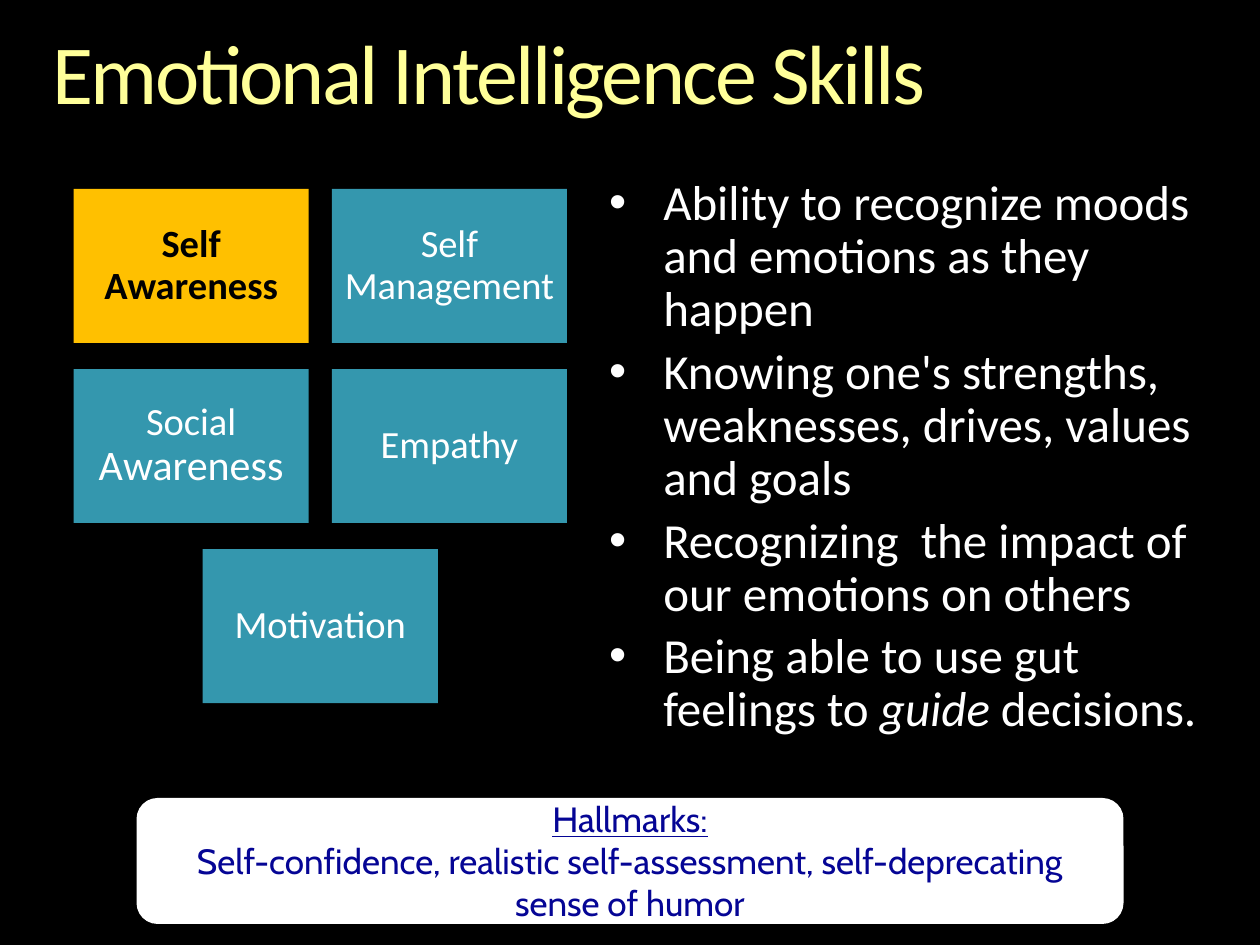
"""Build the slide on emotional intelligence skills."""
from dataclasses import dataclass

from lxml import etree
from pptx import Presentation
from pptx import util as u
from pptx.dml.color import RGBColor
from pptx.enum import shapes, text
from pptx.oxml import ns

BLACK = RGBColor(0x00, 0x00, 0x00)
WHITE = RGBColor(0xFF, 0xFF, 0xFF)
YELLOW = RGBColor(0xFF, 0xFF, 0x99)
AMBER = RGBColor(0xFF, 0xC0, 0x00)
TEAL = RGBColor(0x34, 0x97, 0xAE)
NAVY = RGBColor(0x05, 0x05, 0x95)

TILE_LEFT, TILE_TOP = 42, 108
TILE_WIDTH, TILE_HEIGHT = 134.4, 88
COLUMN_STEP, ROW_STEP = 147.6, 102.9
BULLET_INDENT = 31


@dataclass(frozen=True)
class Run:
    text: str
    size: float
    color: RGBColor = WHITE
    name: str = "Calibri"
    bold: bool = False
    italic: bool = False
    underline: bool = False


@dataclass(frozen=True)
class Tile:
    column: float
    row: int
    runs: tuple[Run, ...]
    fill: RGBColor = TEAL


TILES = (
    Tile(0, 0, (Run("Self Awareness", 22, BLACK, bold=True),), AMBER),
    Tile(1, 0, (Run("Self Management", 22),)),
    Tile(0, 1, (Run("Social ", 22), Run("Awareness", 24))),
    Tile(1, 1, (Run("Empathy", 22),)),
    Tile(0.5, 2, (Run("Motivation", 22),)),
)

BULLETS = (
    (Run("Ability to recognize moods and emotions as they happen", 28),),
    (Run("Knowing one's strengths, weaknesses, drives, values and goals", 28),),
    (Run("Recognizing  the impact of our emotions on others", 28),),
    (Run("Being able to use gut feelings to ", 28),
     Run("guide", 28, italic=True), Run(" decisions.", 28)),
)

HALLMARKS = (
    (Run("Hallmarks:", 20, NAVY, "Cabin", underline=True),),
    (Run("Self-confidence, realistic self-assessment, self-deprecating sense of humor",
         20, NAVY, "Cabin"),),
)


def set_values(target, values: dict) -> None:
    """Set each named attribute on the target."""
    for name, value in values.items():
        setattr(target, name, value)


def set_margins(frame, horizontal: float, vertical: float) -> None:
    """Wrap the text and set its insets in points."""
    set_values(frame, {
        "word_wrap": True,
        "margin_left": u.Pt(horizontal), "margin_right": u.Pt(horizontal),
        "margin_top": u.Pt(vertical), "margin_bottom": u.Pt(vertical),
    })


def add_runs(paragraph, runs: tuple[Run, ...]) -> None:
    """Append formatted runs to a paragraph."""
    for item in runs:
        run = paragraph.add_run()
        run.text = item.text
        set_values(run.font, {
            "name": item.name, "size": u.Pt(item.size), "bold": item.bold,
            "italic": item.italic, "underline": item.underline,
        })
        run.font.color.rgb = item.color


def fill_frame(frame, paragraphs: tuple[tuple[Run, ...], ...], values: dict) -> None:
    """Write paragraphs that share one paragraph format."""
    for index, runs in enumerate(paragraphs):
        paragraph = frame.paragraphs[0] if index == 0 else frame.add_paragraph()
        set_values(paragraph, values)
        add_runs(paragraph, runs)


def add_box(slide, kind, left: float, top: float, width: float, height: float,
            fill: RGBColor):
    """Add a flat filled shape with centred text."""
    shape = slide.shapes.add_shape(
        kind, u.Pt(left), u.Pt(top), u.Pt(width), u.Pt(height))
    shape.shadow.inherit = False
    shape.fill.solid()
    shape.fill.fore_color.rgb = fill
    shape.line.fill.background()
    shape.text_frame.vertical_anchor = text.MSO_ANCHOR.MIDDLE
    return shape


def add_tile(slide, tile: Tile) -> None:
    """Draw one skill tile at its grid place."""
    shape = add_box(
        slide, shapes.MSO_SHAPE.RECTANGLE,
        TILE_LEFT + tile.column * COLUMN_STEP, TILE_TOP + tile.row * ROW_STEP,
        TILE_WIDTH, TILE_HEIGHT, tile.fill)
    set_margins(shape.text_frame, 6.5, 6.5)
    fill_frame(shape.text_frame, (tile.runs,),
               {"alignment": text.PP_ALIGN.CENTER, "line_spacing": 0.9})


def add_text(slide, left: float, top: float, width: float, height: float):
    """Add a wrapping text box without insets and return its frame."""
    shape = slide.shapes.add_textbox(
        u.Pt(left), u.Pt(top), u.Pt(width), u.Pt(height))
    set_margins(shape.text_frame, 0, 0)
    return shape.text_frame


def add_bullet(paragraph) -> None:
    """Give a paragraph a hanging bullet."""
    properties = paragraph._p.get_or_add_pPr()
    properties.set("marL", str(u.Pt(BULLET_INDENT)))
    properties.set("indent", str(-u.Pt(BULLET_INDENT)))
    etree.SubElement(properties, ns.qn("a:buFont"), typeface="Arial")
    etree.SubElement(properties, ns.qn("a:buChar"), char="•")


def main() -> None:
    """Build and save the presentation."""
    presentation = Presentation()
    set_values(presentation, {"slide_width": u.Pt(720), "slide_height": u.Pt(540)})
    slide = presentation.slides.add_slide(presentation.slide_layouts[6])
    slide.background.fill.solid()
    slide.background.fill.fore_color.rgb = BLACK

    title = add_text(slide, 30, 18, 660, 52.5)
    fill_frame(title, ((Run("Emotional Intelligence Skills", 48, YELLOW),),),
               {"line_spacing": 0.9})
    title.paragraphs[0].runs[0].font._element.set("spc", "-150")

    body = add_text(slide, 348, 102, 342.5, 356)
    fill_frame(body, BULLETS, {"line_spacing": 0.9})
    for index, paragraph in enumerate(body.paragraphs):
        paragraph.space_before = u.Pt(5.6 if index else 0)
        add_bullet(paragraph)

    for tile in TILES:
        add_tile(slide, tile)

    banner = add_box(slide, shapes.MSO_SHAPE.ROUNDED_RECTANGLE,
                     78, 456, 564, 72, WHITE)
    set_margins(banner.text_frame, 7.2, 3.6)
    fill_frame(banner.text_frame, HALLMARKS, {"alignment": text.PP_ALIGN.CENTER})

    presentation.save("out.pptx")


if __name__ == "__main__":
    main()
